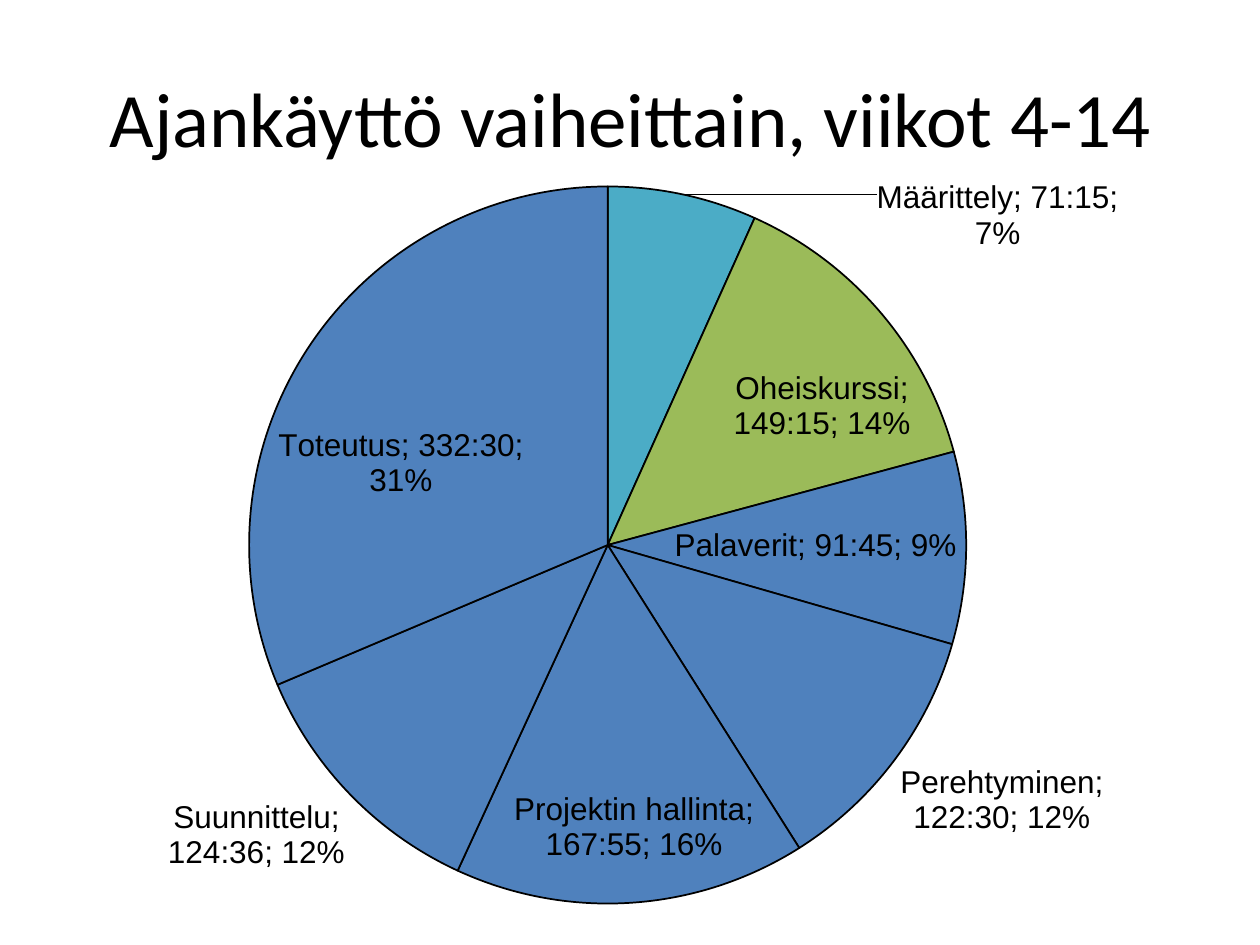
from lxml import etree
from pptx import Presentation
from pptx.chart.data import CategoryChartData
from pptx.dml.color import RGBColor
from pptx.enum import chart as ch, text
from pptx.oxml import ns
from pptx.util import Cm, Pt

COLORS = {"ink": "000000", "teal": "4BACC6", "green": "9BBB59", "blue": "4F81BD"}
FIT, OUT = ch.XL_LABEL_POSITION.BEST_FIT, ch.XL_LABEL_POSITION.OUTSIDE_END
# phase, time in days, slice colour, label position
PHASES = [
    ("Määrittely", 2.9688, "teal", OUT),
    ("Oheiskurssi", 6.2188, "green", FIT),
    ("Palaverit", 3.823, "blue", FIT),
    ("Perehtyminen", 5.1042, "blue", OUT),
    ("Projektin hallinta", 6.9966, "blue", FIT),
    ("Suunnittelu", 5.1917, "blue", OUT),
    ("Toteutus", 13.8542, "blue", FIT),
]


def color(name):
    return RGBColor.from_string(COLORS[name])


def layout(**sizes):
    """Make a manual chart layout from fractions of the chart's size."""
    node = etree.Element(ns.qn("c:layout"))
    man = etree.SubElement(node, ns.qn("c:manualLayout"))
    for tag, val in sizes.items():
        etree.SubElement(man, ns.qn("c:" + tag)).set("val", str(val))
    return node


prs = Presentation()
prs.slide_width, prs.slide_height = Cm(25.4), Cm(19.05)
slide = prs.slides.add_slide(prs.slide_layouts[5])

title = slide.shapes.title
title.left, title.top, title.width, title.height = Cm(1.29), Cm(0.76), Cm(22.86), Cm(3.18)
title.text_frame.text = "Ajankäyttö vaiheittain, viikot 4-14"
title.text_frame.vertical_anchor = text.MSO_ANCHOR.MIDDLE
head = title.text_frame.paragraphs[0]
head.alignment = text.PP_ALIGN.CENTER
head.font.name, head.font.size = "Calibri", Pt(44)
head.font.color.rgb = color("ink")

# Days are shown as hours and minutes
data = CategoryChartData(number_format="[h]:mm")
data.categories = [phase[0] for phase in PHASES]
data.add_series("Series 1", [phase[1] for phase in PHASES])
pie = slide.shapes.add_chart(
    ch.XL_CHART_TYPE.PIE, Cm(-0.42), Cm(1.93), Cm(25.86), Cm(18.3), data
).chart
pie.has_title = pie.has_legend = False
pie.font.name, pie.font.size = "Arial", Pt(10)
pie.font.color.rgb = color("ink")

area = pie._chartSpace.chart.plotArea
for old in area.findall(ns.qn("c:layout")):
    area.remove(old)
area.insert(0, layout(layoutTarget="inner", xMode="edge", yMode="edge",
                      x=0.21, y=0.1, w=0.56, h=0.79))

points = pie.plots[0].series[0].points
for i, (_, _, fill, place) in enumerate(PHASES):
    form = points[i].format
    form.fill.solid()
    form.fill.fore_color.rgb = color(fill)
    form.line.color.rgb = color("ink")
    form.line.width = Pt(1)

    label = points[i].data_label
    label.font.name, label.font.size = "Arial", Pt(18)
    label.font.color.rgb = color("ink")
    label.position = place
    node = label._dLbl
    for tag in ("showVal", "showCatName", "showPercent"):
        node.find(ns.qn("c:" + tag)).set("val", "1")
    etree.SubElement(node, ns.qn("c:separator")).text = "; "
    share = etree.Element(ns.qn("c:numFmt"), formatCode="0%", sourceLinked="0")
    node.insert(1, share)
    if i == 0:
        node.insert(1, layout(x=0.15, y=0.07))

prs.save("out.pptx")
